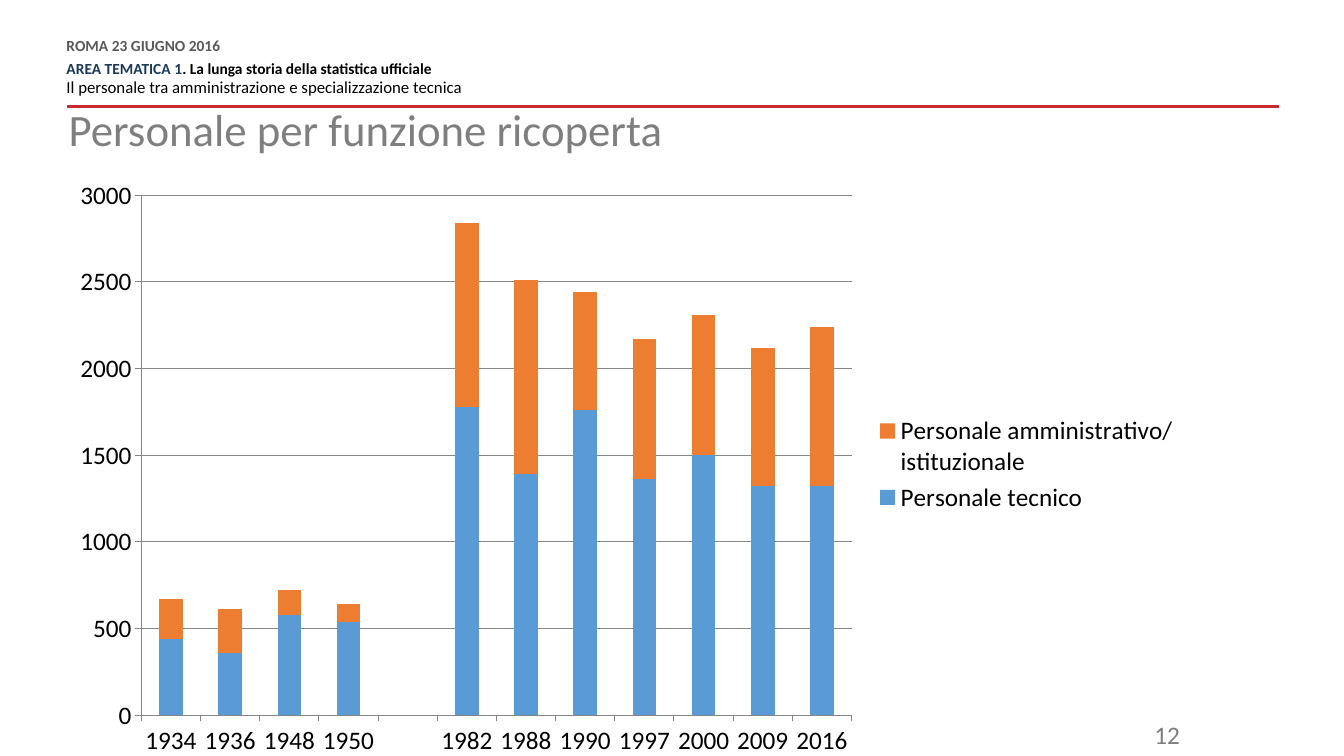
"""Build the slide on staff by function, with a stacked column chart."""
import pptx
import pptx.chart.data
import pptx.dml.color
import pptx.enum.chart
import pptx.enum.shapes
import pptx.enum.text
import pptx.oxml
import pptx.oxml.ns
import pptx.util

Inches = pptx.util.Inches
Pt = pptx.util.Pt
RGBColor = pptx.dml.color.RGBColor
qn = pptx.oxml.ns.qn

FONT = "Calibri"
BLACK = RGBColor(0x00, 0x00, 0x00)
NAVY = RGBColor(0x1C, 0x38, 0x5A)
DARK = RGBColor(0x59, 0x59, 0x59)
GREY = RGBColor(0x7F, 0x7F, 0x7F)
AXIS = RGBColor(0x86, 0x86, 0x86)
RED = RGBColor(0xC7, 0x2A, 0x31)
BLUE = RGBColor(0x5B, 0x9B, 0xD5)
ORANGE = RGBColor(0xED, 0x7D, 0x31)

W, H = 13.33, 7.5
LEFT = 0.66
RULE_Y = 1.06


def add_text(left, top, width, height, paragraphs, inset=0.0):
    """Add a wrapped text box; each paragraph is (size, bold, runs)."""
    tf = slide.shapes.add_textbox(
        Inches(left), Inches(top), Inches(width), Inches(height)).text_frame
    tf.word_wrap = True
    tf.margin_left = tf.margin_right = Inches(inset)
    tf.margin_top = tf.margin_bottom = Inches(inset / 2)
    for i, (size, bold, runs) in enumerate(paragraphs):
        p = tf.add_paragraph() if i else tf.paragraphs[0]
        p.font.name, p.font.size, p.font.bold = FONT, Pt(size), bold
        for text, color in runs:
            r = p.add_run()
            r.text = text
            r.font.color.rgb = color
    return tf


def set_layout(parent, before, x, y, w, h, target=""):
    """Place a chart part by shares of the chart's size."""
    for old in parent.findall(qn("c:layout")):
        parent.remove(old)
    modes = '<c:xMode val="edge"/><c:yMode val="edge"/>'
    parent.insert(before, pptx.oxml.parse_xml(
        f'<c:layout {pptx.oxml.ns.nsdecls("c")}><c:manualLayout>{target}{modes}'
        f'<c:x val="{x}"/><c:y val="{y}"/><c:w val="{w}"/><c:h val="{h}"/>'
        '</c:manualLayout></c:layout>'))


prs = pptx.Presentation()
prs.slide_width, prs.slide_height = Inches(W), Inches(H)
slide = prs.slides.add_slide(prs.slide_layouts[6])

rule = slide.shapes.add_connector(
    pptx.enum.shapes.MSO_CONNECTOR.STRAIGHT,
    Inches(W - 0.64), Inches(RULE_Y), Inches(LEFT), Inches(RULE_Y))
rule.line.color.rgb = RED
rule.line.width = Pt(2)
rule._element.spPr.append(pptx.oxml.parse_xml(
    f'<a:effectLst {pptx.oxml.ns.nsdecls("a")}/>'))

header = add_text(LEFT, 0.39, 8.34, 0.59, [
    (11, True, [("ROMA 23 GIUGNO 2016", DARK)]),
    (11, True, [("AREA TEMATICA 1", NAVY),
                (". La lunga storia della statistica ufficiale", BLACK)]),
    (12, False, [("Il personale tra amministrazione e specializzazione tecnica", BLACK)]),
])
for p, before, after in zip(header.paragraphs, (0, 0, 3), (6, 0, 6)):
    p.line_spacing = Pt(10.8)
    p.space_before, p.space_after = Pt(before), Pt(after)

title = add_text(0.68, 1.07, 12.11, 0.57,
                 [(32, False, [("Personale per funzione ricoperta", GREY)])])
title.paragraphs[0].line_spacing = 0.9

number = add_text(8.8, 7.09, 3, 0.4, [(18, False, [("12", GREY)])], inset=0.1)
number.paragraphs[0].alignment = pptx.enum.text.PP_ALIGN.RIGHT

data = pptx.chart.data.CategoryChartData()
data.categories = ["1934", "1936", "1948", "1950", "", "1982",
                   "1988", "1990", "1997", "2000", "2009", "2016"]
data.add_series("Personale tecnico",
                [440, 360, 580, 540, None, 1780, 1390, 1760, 1360, 1500, 1320, 1320])
data.add_series("Personale amministrativo/ istituzionale",
                [230, 250, 140, 100, None, 1060, 1120, 680, 810, 810, 800, 920])
chart = slide.shapes.add_chart(
    pptx.enum.chart.XL_CHART_TYPE.COLUMN_STACKED,
    Inches(0.62), Inches(1.64), Inches(11.18), Inches(5.93), data).chart
chart.font.name, chart.font.size = FONT, Pt(18)
chart.font.color.rgb = BLACK
chart.has_title = False

plot = chart.plots[0]
plot.gap_width, plot.overlap = 150, 100
plot.vary_by_categories = False
for series, color in zip(plot.series, (BLUE, ORANGE)):
    series.format.fill.solid()
    series.format.fill.fore_color.rgb = color

for axis in (chart.category_axis, chart.value_axis):
    axis.major_tick_mark = pptx.enum.chart.XL_TICK_MARK.OUTSIDE
    axis.minor_tick_mark = pptx.enum.chart.XL_TICK_MARK.NONE
    axis.format.line.color.rgb = AXIS
values = chart.value_axis
values.minimum_scale, values.maximum_scale, values.major_unit = 0, 3000, 500
values.has_major_gridlines = True
values.major_gridlines.format.line.color.rgb = AXIS

chart.has_legend = True
chart.legend.position = pptx.enum.chart.XL_LEGEND_POSITION.RIGHT
chart.legend.include_in_layout = False
set_layout(chart._chartSpace.chart.plotArea, 0, 0.07, 0.05, 0.63, 0.87,
           '<c:layoutTarget val="inner"/>')
set_layout(chart.legend._element, 1, 0.72, 0.41, 0.27, 0.18)

prs.save("out.pptx")
